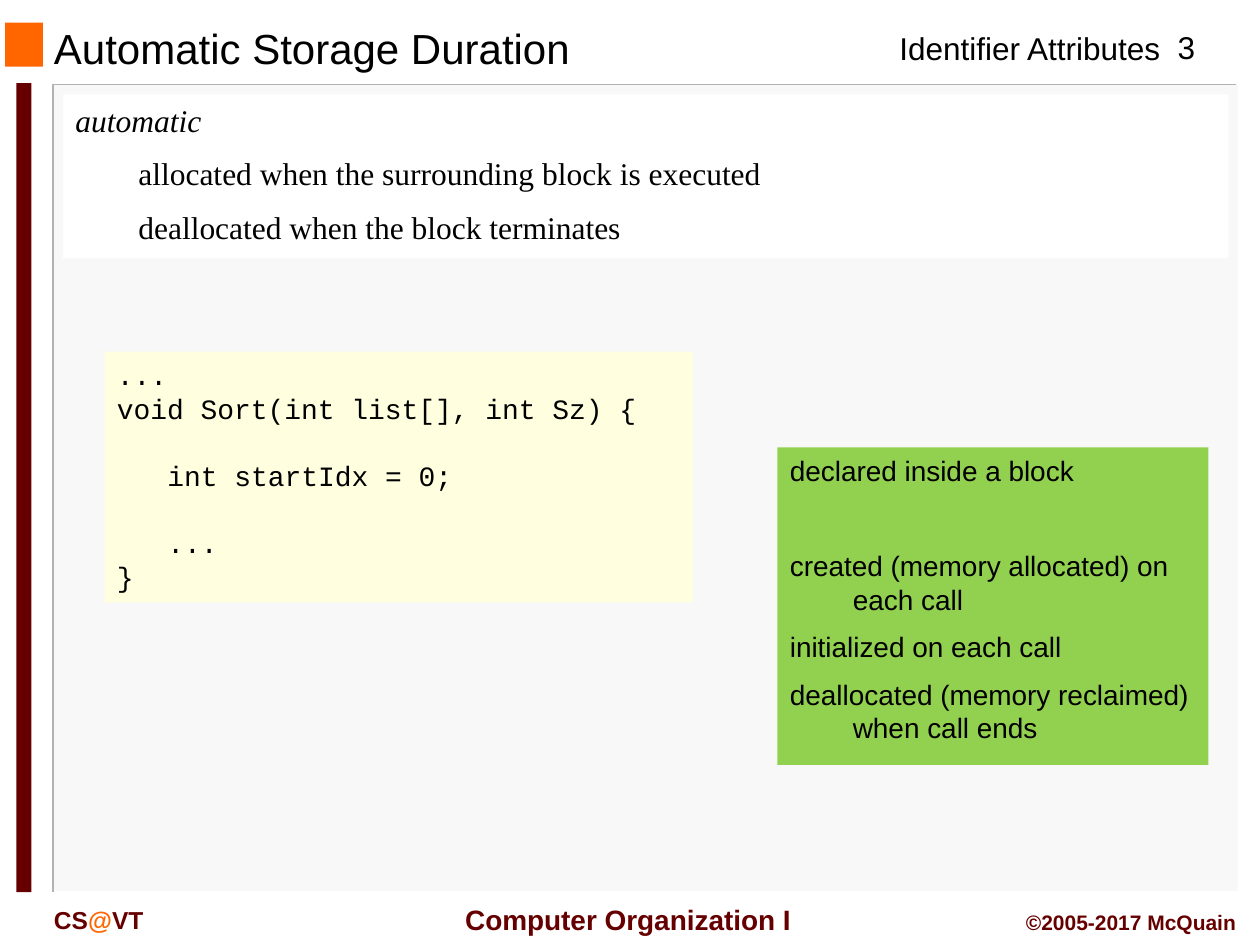
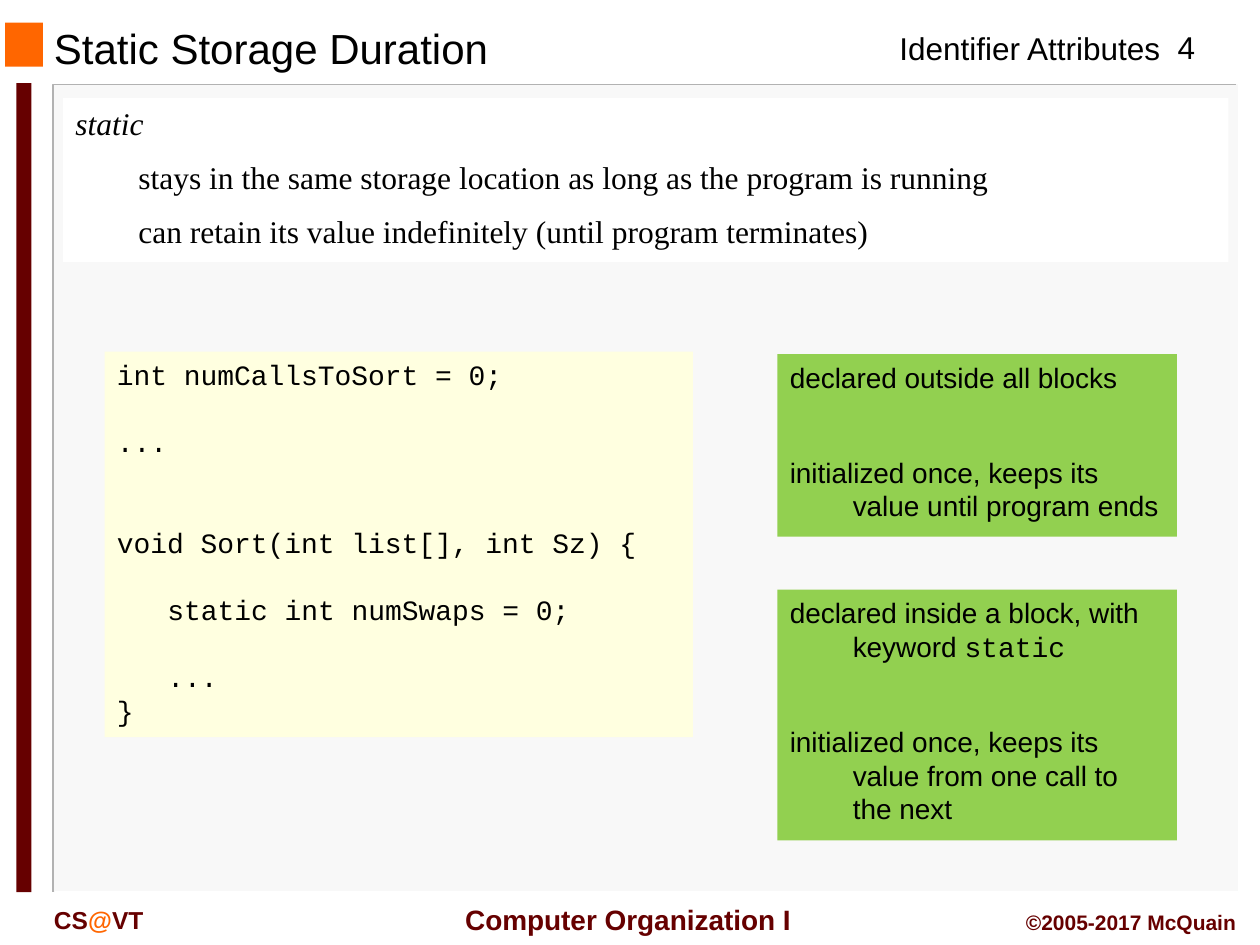
from pptx import Presentation
from pptx.dml.color import RGBColor
from pptx.enum.shapes import MSO_SHAPE
from pptx.enum.text import MSO_ANCHOR, PP_ALIGN
from pptx.util import Inches, Pt

RECT = MSO_SHAPE.RECTANGLE
TOP, MIDDLE = MSO_ANCHOR.TOP, MSO_ANCHOR.MIDDLE
LEFT, CENTER, RIGHT = PP_ALIGN.LEFT, PP_ALIGN.CENTER, PP_ALIGN.RIGHT

BLACK, WHITE = "000000", "FFFFFF"
MAROON, ORANGE = "660000", "FF6600"
PANEL, EDGE = "F8F8F8", "B2B2B2"
CODE_FILL, NOTE_FILL = "FFFFE0", "92D050"
SANS, SERIF, MONO = "Arial", "Times New Roman", "Courier New"
LINE = 1.2
GAP = 0.5
HANG = 0.5
CODE_COLUMN = 0.6


def rgb(value):
    """Return the colour for a hex string."""
    return RGBColor.from_string(value)


class Deck:
    """Hold the shared style and the slide being filled."""

    def __init__(self):
        """Start an empty 10 by 7.5 inch presentation."""
        self.prs = Presentation()
        self.prs.slide_width, self.prs.slide_height = Inches(10), Inches(7.5)
        self.slide = None

    def new_slide(self, title, number):
        """Add a slide with its frame, header and footer."""
        self.slide = self.prs.slides.add_slide(self.prs.slide_layouts[6])
        self.block((0.43, 0.67, 9.4, 6.41), PANEL)
        self.edge([(9.81, 0.67), (0.42, 0.67), (0.42, 7.08)], EDGE)
        self.edge([(9.83, 0.67), (9.83, 7.08), (0.44, 7.08)], WHITE)
        self.block((0.04, 0.18, 0.3, 0.35), ORANGE)
        self.block((0.13, 0.66, 0.12, 6.42), MAROON)
        self.label((7.04, 0.18, 2.29, 0.4), "Identifier Attributes", 18)
        self.label((3.53, 7.11, 2.91, 0.37), "Computer Organization I", 16,
                   MAROON, True, CENTER, MIDDLE)
        self.label((9.08, 0.17, 0.67, 0.4), str(number), 18, align=CENTER)
        self.label((0.33, 7.13, 1.5, 0.33),
                   [("CS", {}), ("@", {"color": ORANGE}), ("VT", {})],
                   14, MAROON, True)
        self.label((7.83, 7.17, 2.08, 0.3), "©2005-2017 McQuain", 12,
                   MAROON, True, RIGHT)
        self.label((0.33, 0.19, 6.33, 0.38), title, 24, anchor=MIDDLE)

    def block(self, box, fill):
        """Add a plain filled rectangle and return its text frame."""
        rect = self.slide.shapes.add_shape(RECT, *map(Inches, box))
        rect.shadow.inherit = False
        rect.fill.solid()
        rect.fill.fore_color.rgb = rgb(fill)
        rect.line.fill.background()
        rect.text_frame.word_wrap = True
        rect.text_frame.vertical_anchor = TOP
        return rect.text_frame

    def edge(self, points, color):
        """Draw an open outline through the points."""
        start, *rest = [(Inches(x), Inches(y)) for x, y in points]
        builder = self.slide.shapes.build_freeform(*start)
        builder.add_line_segments(rest, close=False)
        outline = builder.convert_to_shape()
        outline.shadow.inherit = False
        outline.fill.background()
        outline.line.color.rgb = rgb(color)
        outline.line.width = Pt(1)

    def label(self, box, text, size, color=BLACK, bold=False, align=LEFT, anchor=TOP):
        """Add one line of text in the sans font."""
        frame = self.slide.shapes.add_textbox(*map(Inches, box)).text_frame
        frame.word_wrap = True
        frame.vertical_anchor = anchor
        self.set_text(frame.paragraphs[0], text, SANS, size, color, bold, align)

    def set_text(self, paragraph, text, name, size, color=BLACK, bold=False, align=LEFT):
        """Fill a paragraph from a string or from (text, changes) runs."""
        paragraph.alignment = align
        font = paragraph.font
        font.name, font.size, font.bold = name, Pt(size), bold
        font.color.rgb = rgb(color)
        for part, changes in [(text, {})] if isinstance(text, str) else text:
            run = paragraph.add_run()
            run.text = part
            if "color" in changes:
                run.font.color.rgb = rgb(changes["color"])
            if "name" in changes:
                run.font.name = changes["name"]

    def body(self, frame, index, text, name, size, before=0, margin=0, indent=0):
        """Fill the paragraph at index with its spacing and indents."""
        paragraph = frame.add_paragraph() if index else frame.paragraphs[0]
        self.set_text(paragraph, text, name, size)
        paragraph.line_spacing = Pt(size * LINE)
        paragraph.space_before = Pt(before)
        properties = paragraph._p.get_or_add_pPr()
        properties.set("marL", str(Inches(margin)))
        properties.set("indent", str(Inches(indent)))
        return paragraph

    def definition(self, top, term, facts):
        """Add a term in italics with its facts indented below."""
        frame = self.block((0.5, top, 9.25, 1.3), WHITE)
        self.body(frame, 0, term, SERIF, 18).font.italic = True
        for index, fact in enumerate(facts, 1):
            self.body(frame, index, fact, SERIF, 18, 18 * GAP, HANG)

    def code(self, height, listing):
        """Add a code listing, turning its empty lines and indents into spacing."""
        frame = self.block((0.83, 2.79, 4.67, height), CODE_FILL)
        index = skipped = 0
        for line in listing.strip().split("\n"):
            statement = line.lstrip()
            if not statement:
                skipped += 1
                continue
            depth = len(line) - len(statement)
            self.body(frame, index, statement, MONO, 16, skipped * 16 * LINE,
                      depth * 16 * CODE_COLUMN / 72)
            index, skipped = index + 1, 0

    def note(self, box, declared, effects):
        """Add a green note: where it is declared, then what follows."""
        frame = self.block(box, NOTE_FILL)
        gap = 16 * GAP
        self.body(frame, 0, declared, SANS, 16, 0, HANG, -HANG)
        for index, effect in enumerate(effects, 1):
            before = 2 * gap + 16 * LINE if index == 1 else gap
            self.body(frame, index, effect, SANS, 16, before, HANG, -HANG)


AUTOMATIC_CODE = """
...
void Sort(int list[], int Sz) {

   int startIdx = 0;

   ...
}
"""

STATIC_CODE = """
int numCallsToSort = 0;

...


void Sort(int list[], int Sz) {

   static int numSwaps = 0;

   ...
}
"""


def main():
    """Build both slides and save them."""
    deck = Deck()

    deck.new_slide("Automatic Storage Duration", 3)
    deck.definition(0.75, "automatic", [
        "allocated when the surrounding block is executed",
        "deallocated when the block terminates"])
    deck.code(1.99, AUTOMATIC_CODE)
    deck.note((6.17, 3.55, 3.42, 2.52), "declared inside a block", [
        "created (memory allocated) on each call",
        "initialized on each call",
        "deallocated (memory reclaimed) when call ends"])

    deck.new_slide("Static Storage Duration", 4)
    deck.definition(0.78, "static", [
        "stays in the same storage location as long as the program is running",
        "can retain its value indefinitely (until program terminates)"])
    deck.code(3.06, STATIC_CODE)
    deck.note((6.17, 2.81, 3.17, 1.45), "declared outside all blocks", [
        "initialized once, keeps its value until program ends"])
    deck.note((6.17, 4.68, 3.17, 1.99),
              [("declared inside a block, with keyword ", {}),
               ("static", {"name": MONO})],
              ["initialized once, keeps its value from one call to the next"])

    deck.prs.save("out.pptx")


if __name__ == "__main__":
    main()
